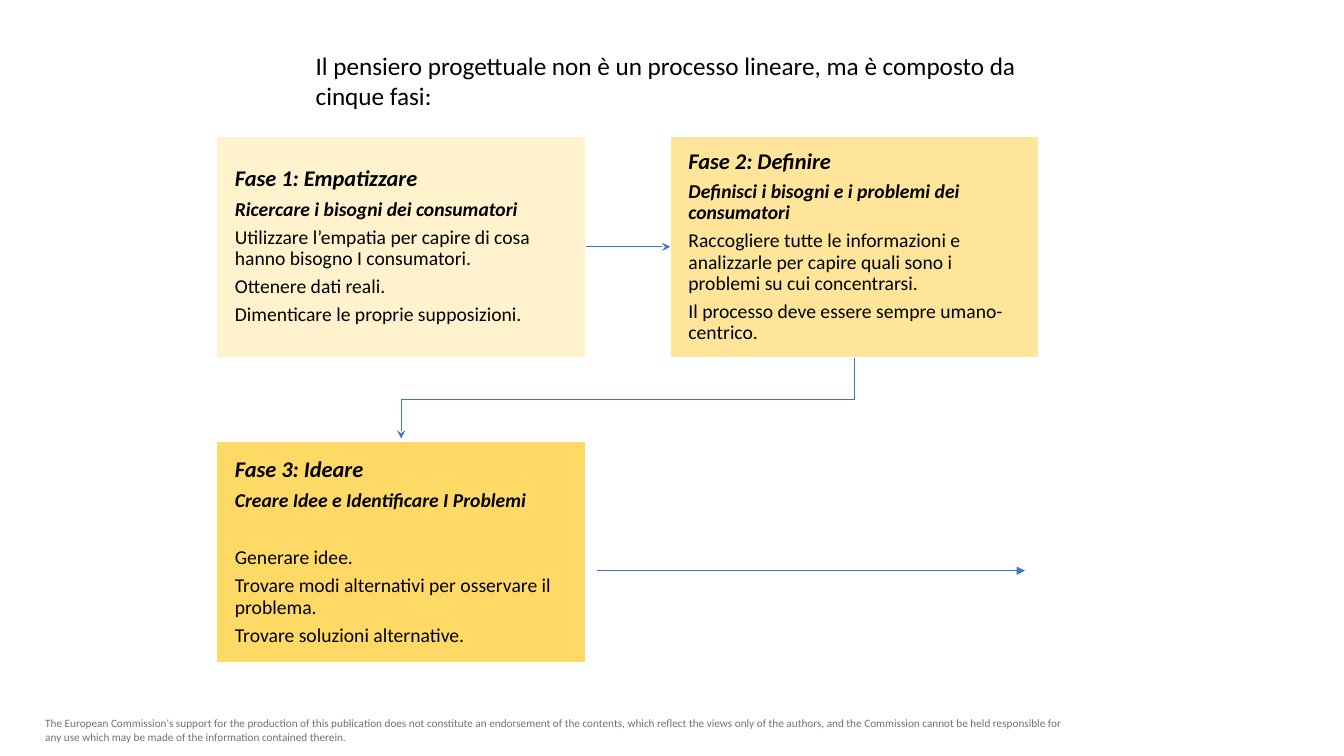
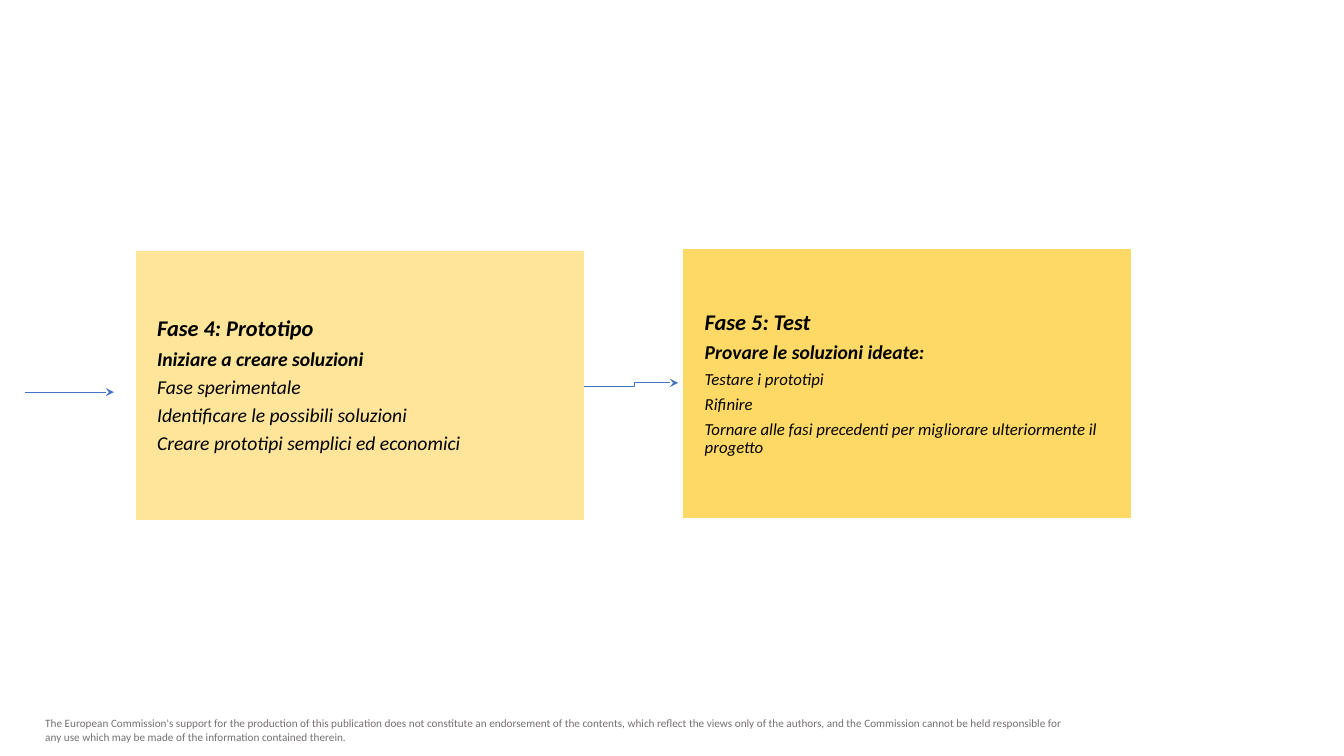
"""Build two slides on the five phases of design thinking."""
from dataclasses import dataclass
from typing import Any

from lxml import etree
from pptx import Presentation
from pptx.dml import color as dml
from pptx.enum import shapes, text
from pptx.oxml import ns
from pptx.util import Cm, Pt

BLACK, WHITE, GREY, BLUE = "000000", "FFFFFF", "757070", "4472C4"
CREAM, SAND, GOLD = "FFF2CC", "FEE599", "FFD966"
FONT = "Calibri"
NOTE = (
    "The European Commission's support for the production of this publication "
    "does not constitute an endorsement of the contents, which reflect the views "
    "only of the authors, and the Commission cannot be held responsible for any "
    "use which may be made of the information contained therein."
)
TITLE = "Il pensiero progettuale non è un processo lineare, ma è composto da cinque fasi:"


@dataclass(frozen=True)
class Size:
    """Width, height and inner margins of a card, in cm."""
    width: float
    height: float
    side: float
    edge: float


@dataclass(frozen=True)
class Card:
    """One phase: its place in cm, fill, size and wording."""
    left: float
    top: float
    size: Size
    fill: str
    head: str
    lead: str
    items: tuple[str, ...]
    points: int = 14
    slant: bool = False
    gap: float = 4.9

    @property
    def mid(self) -> float:
        """Return the horizontal centre."""
        return self.left + self.size.width / 2

    @property
    def base(self) -> float:
        """Return the bottom edge."""
        return self.top + self.size.height


SMALL = Size(9.3, 5.58, 0.46, 0.48)
LARGE = Size(11.33, 6.81, 0.56, 0.58)
COLS, ROWS = (5.46, 16.89), (3.43, 11.13)

FEEL = Card(COLS[0], ROWS[0], SMALL, CREAM, "Fase 1: Empatizzare",
            "Ricercare i bisogni dei consumatori",
            ("Utilizzare l’empatia per capire di cosa hanno bisogno I consumatori.",
             "Ottenere dati reali.",
             "Dimenticare le proprie supposizioni."))
FRAME = Card(COLS[1], ROWS[0], SMALL, SAND, "Fase 2: Definire",
             "Definisci i bisogni e i problemi dei consumatori",
             ("Raccogliere tutte le informazioni e analizzarle per capire quali "
              "sono i problemi su cui concentrarsi.",
              "Il processo deve essere sempre umano-centrico."))
THINK = Card(COLS[0], ROWS[1], SMALL, GOLD, "Fase 3: Ideare",
             "Creare Idee e Identificare I Problemi",
             ("Generare idee.",
              "Trovare modi alternativi per osservare il problema.",
              "Trovare soluzioni alternative."), gap=25.9)
BUILD = Card(3.4, 6.32, LARGE, SAND, "Fase 4: Prototipo",
             "Iniziare a creare soluzioni",
             ("Fase sperimentale",
              "Identificare le possibili soluzioni",
              "Creare prototipi semplici ed economici"), slant=True)
TEST = Card(17.2, 6.27, LARGE, GOLD, "Fase 5: Test",
            "Provare le soluzioni ideate:",
            ("Testare i prototipi",
             "Rifinire",
             "Tornare alle fasi precedenti per migliorare ulteriormente il progetto"),
            points=12, slant=True)


def rgb(code: str) -> dml.RGBColor:
    """Turn a hex string into a colour."""
    return dml.RGBColor.from_string(code)


def assign(target: Any, values: dict[str, Any]) -> None:
    """Set each named attribute on the target."""
    for name, value in values.items():
        setattr(target, name, value)


def style(para: Any, size: float, code: str = BLACK,
          bold: bool = False, slant: bool = False) -> None:
    """Format the font of a left-aligned paragraph."""
    para.alignment = text.PP_ALIGN.LEFT
    assign(para.font, {"name": FONT, "size": Pt(size), "bold": bold, "italic": slant})
    para.font.color.rgb = rgb(code)


def place(shape: Any, left: float, top: float, width: float, height: float) -> None:
    """Move and size a shape in cm."""
    assign(shape, {"left": Cm(left), "top": Cm(top),
                   "width": Cm(width), "height": Cm(height)})


def label(shape: Any, words: str, size: float, code: str) -> None:
    """Fill a plain text shape with one paragraph."""
    frame = shape.text_frame
    frame.text = words
    assign(frame, {"word_wrap": True, "auto_size": text.MSO_AUTO_SIZE.NONE,
                   "vertical_anchor": text.MSO_ANCHOR.TOP})
    style(frame.paragraphs[0], size, code)


def footer(slide: Any, master: Any) -> None:
    """Write the disclaimer once and keep it on the master."""
    box = slide.shapes.add_textbox(Cm(0.89), Cm(17.93), Cm(26.57), Cm(0.94))
    label(box, NOTE, 8, GREY)
    box.element.nvSpPr.cNvPr.set("id", "20")
    master.element.cSld.spTree.append(box.element)


def panel(slide: Any, card: Card) -> Any:
    """Draw one phase card with its text."""
    size = card.size
    shape = slide.shapes.add_shape(
        shapes.MSO_SHAPE.RECTANGLE,
        Cm(card.left), Cm(card.top), Cm(size.width), Cm(size.height))
    shape.shadow.inherit = False
    shape.fill.solid()
    shape.fill.fore_color.rgb = rgb(card.fill)
    shape.line.color.rgb = rgb(WHITE)
    shape.line.width = Pt(1)
    frame = shape.text_frame
    assign(frame, {"word_wrap": True, "vertical_anchor": text.MSO_ANCHOR.MIDDLE,
                   "margin_left": Cm(size.side), "margin_right": Cm(size.side),
                   "margin_top": Cm(size.edge), "margin_bottom": Cm(size.edge)})
    rows = [(card.head, 16, True, True, 0), (card.lead, 14, True, True, 5.6)]
    rows += [(item, card.points, False, card.slant, 4.9 if rank else card.gap)
             for rank, item in enumerate(card.items)]
    for rank, (words, points, bold, slant, gap) in enumerate(rows):
        para = frame.add_paragraph() if rank else frame.paragraphs[0]
        para.text = words
        para.line_spacing = 0.9
        if rank:
            para.space_before = Pt(gap)
        style(para, points, bold=bold, slant=slant)
    return shape


def tip(line: Any, kind: str) -> None:
    """Give a line its colour, weight and arrowhead."""
    line.line.color.rgb = rgb(BLUE)
    line.line.width = Pt(0.75)
    etree.SubElement(line.get_or_add_ln(), ns.qn("a:tailEnd"), type=kind)
    etree.SubElement(line.element.spPr, ns.qn("a:effectLst"))


def arrow(slide: Any, start: float, end: float, level: float, kind: str = "stealth") -> Any:
    """Draw a level straight arrow."""
    line = slide.shapes.add_connector(
        shapes.MSO_CONNECTOR.STRAIGHT, Cm(start), Cm(level), Cm(end), Cm(level))
    tip(line, kind)
    return line


def bend(slide: Any, *spots: tuple[float, float]) -> None:
    """Draw an arrow with square turns."""
    first, *rest = [(Cm(left), Cm(top)) for left, top in spots]
    maker = slide.shapes.build_freeform(*first)
    maker.add_line_segments(rest, close=False)
    line = maker.convert_to_shape()
    line.fill.background()
    tip(line, "stealth")


def start(deck: Any) -> None:
    """Draw phases one to three."""
    slide = deck.slides.add_slide(deck.slide_layouts[5])
    footer(slide, deck.slide_master)
    title = slide.shapes.title
    place(title, 7.7, 1.14, 18.49, 1.8)
    label(title, TITLE, 18, BLACK)
    feel, frame, _ = [panel(slide, card) for card in (FEEL, FRAME, THINK)]
    link = arrow(slide, FEEL.left + SMALL.width, FRAME.left, FEEL.top + SMALL.height / 2)
    link.begin_connect(feel, 3)
    link.end_connect(frame, 1)
    turn = 10.06
    bend(slide, (FRAME.mid, FRAME.base), (FRAME.mid, turn),
         (THINK.mid, turn), (THINK.mid, THINK.top - 0.08))
    arrow(slide, 15.04, 25.83, 14.38, "triangle")


def finish(deck: Any) -> None:
    """Draw phases four and five."""
    slide = deck.slides.add_slide(deck.slide_layouts[6])
    for card in (BUILD, TEST):
        panel(slide, card)
    arrow(slide, 0.64, 2.87, 9.88)
    bend(slide, (14.73, 9.73), (15.98, 9.73), (15.98, 9.65), (17.09, 9.65))


def main() -> None:
    """Build and save the deck."""
    deck = Presentation()
    assign(deck, {"slide_width": Cm(33.87), "slide_height": Cm(19.05)})
    start(deck)
    finish(deck)
    deck.save("out.pptx")


if __name__ == "__main__":
    main()
